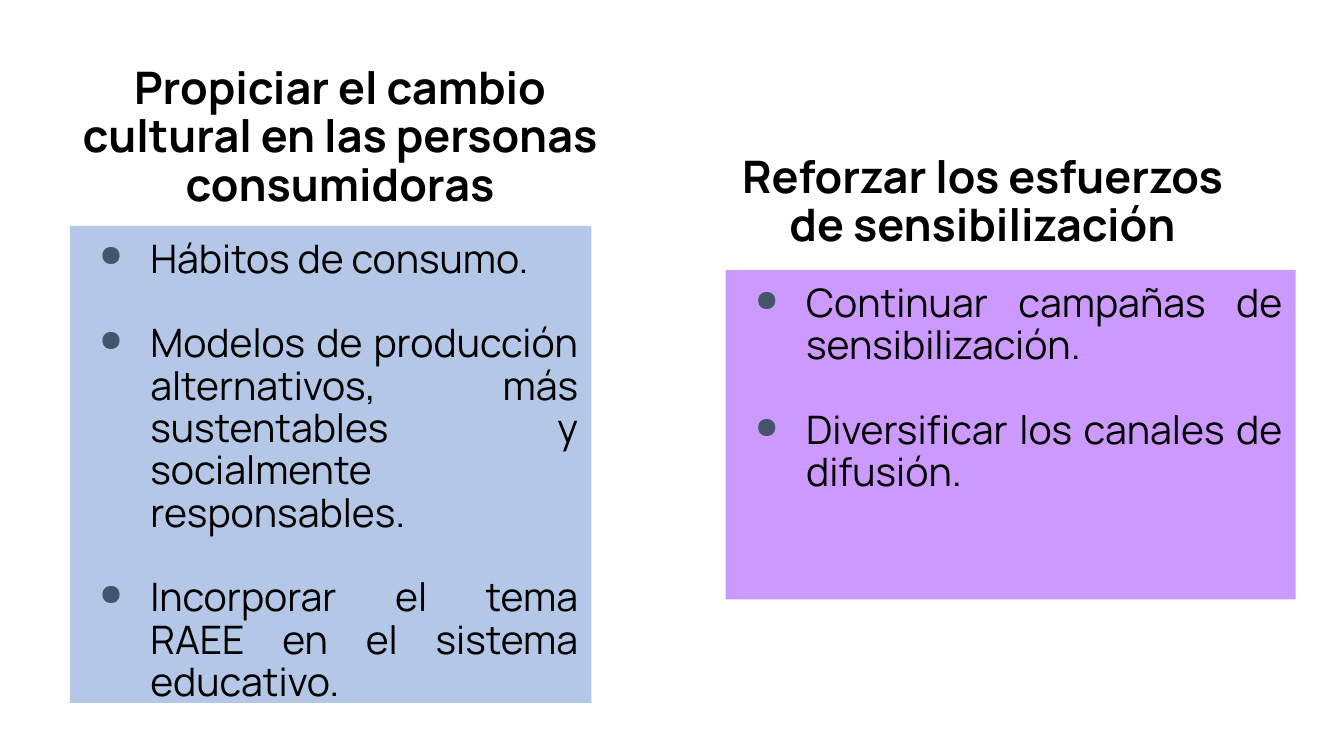
"""Build a slide with two headed bullet panels on awareness and consumption."""
from lxml import etree
from pptx import Presentation
from pptx.dml.color import RGBColor
from pptx.enum.shapes import MSO_SHAPE as Shape
from pptx.enum.text import MSO_ANCHOR as Anchor, MSO_AUTO_SIZE as AutoSize, PP_ALIGN as Align
from pptx.oxml.ns import qn
from pptx.util import Inches, Pt

COLORS = {"text": "000000", "bullet": "44546A", "blue": "B4C7E7", "purple": "CC99FF"}
HEADING = {"name": "Manrope", "size": Pt(24), "bold": True}
BODY = {"name": "Manrope", "size": Pt(21), "bold": False}
FRAME = {
    "word_wrap": True, "auto_size": AutoSize.NONE, "vertical_anchor": Anchor.TOP,
    "margin_left": Inches(0.1), "margin_right": Inches(0.1),
    "margin_top": Inches(0.1), "margin_bottom": Inches(0.1),
}
PANELS = [
    {
        "heading": "Propiciar el cambio cultural en las personas consumidoras",
        "heading_at": (0.34, 0.39, 4.38, 0.68),
        "panel_at": (0.52, 1.68, 3.88, 3.55),
        "fill": "blue",
        "items": [
            "Hábitos de consumo.",
            "Modelos de producción alternativos, más sustentables y socialmente responsables.",
            "Incorporar el tema RAEE en el sistema educativo.",
        ],
    },
    {
        "heading": "Reforzar los esfuerzos de sensibilización",
        "heading_at": (5.24, 1.05, 4.14, 0.68),
        "panel_at": (5.4, 2.01, 4.24, 2.45),
        "fill": "purple",
        "items": [
            "Continuar campañas de sensibilización.",
            "Diversificar los canales de difusión.",
        ],
    },
]


def write_paragraph(para, text, style, align):
    para.alignment = align
    para.line_spacing = 0.9
    span = para.add_run()
    span.text = text
    for name, value in style.items():
        setattr(span.font, name, value)
    span.font.color.rgb = RGBColor.from_string(COLORS["text"])


def add_bullet(para):
    props = para._p.get_or_add_pPr()
    props.set("marL", str(Inches(0.5)))
    props.set("indent", str(Inches(-0.38)))
    color = etree.SubElement(props, qn("a:buClr"))
    etree.SubElement(color, qn("a:srgbClr"), val=COLORS["bullet"])
    etree.SubElement(props, qn("a:buSzPct"), val="75000")
    etree.SubElement(props, qn("a:buChar"), char="●")


deck = Presentation()
deck.slide_width = Inches(10)
deck.slide_height = deck.slide_width * 9 // 16
page = deck.slides.add_slide(deck.slide_layouts[5])

for number, panel in enumerate(PANELS):
    place = [Inches(value) for value in panel["heading_at"]]
    if number == 0:
        heading = page.shapes.title
        heading.left, heading.top, heading.width, heading.height = place
    else:
        heading = page.shapes.add_textbox(*place)
    box = page.shapes.add_shape(Shape.RECTANGLE, *[Inches(value) for value in panel["panel_at"]])
    box.shadow.inherit = False
    box.fill.solid()
    box.fill.fore_color.rgb = RGBColor.from_string(COLORS[panel["fill"]])
    box.line.fill.background()

    for frame in (heading.text_frame, box.text_frame):
        for name, value in FRAME.items():
            setattr(frame, name, value)

    write_paragraph(heading.text_frame.paragraphs[0], panel["heading"], HEADING, Align.CENTER)
    for index, item in enumerate(panel["items"]):
        para = box.text_frame.add_paragraph() if index else box.text_frame.paragraphs[0]
        write_paragraph(para, item, BODY, Align.JUSTIFY)
        if index:
            para.space_before = Pt(22.7)
        add_bullet(para)

deck.save("out.pptx")
